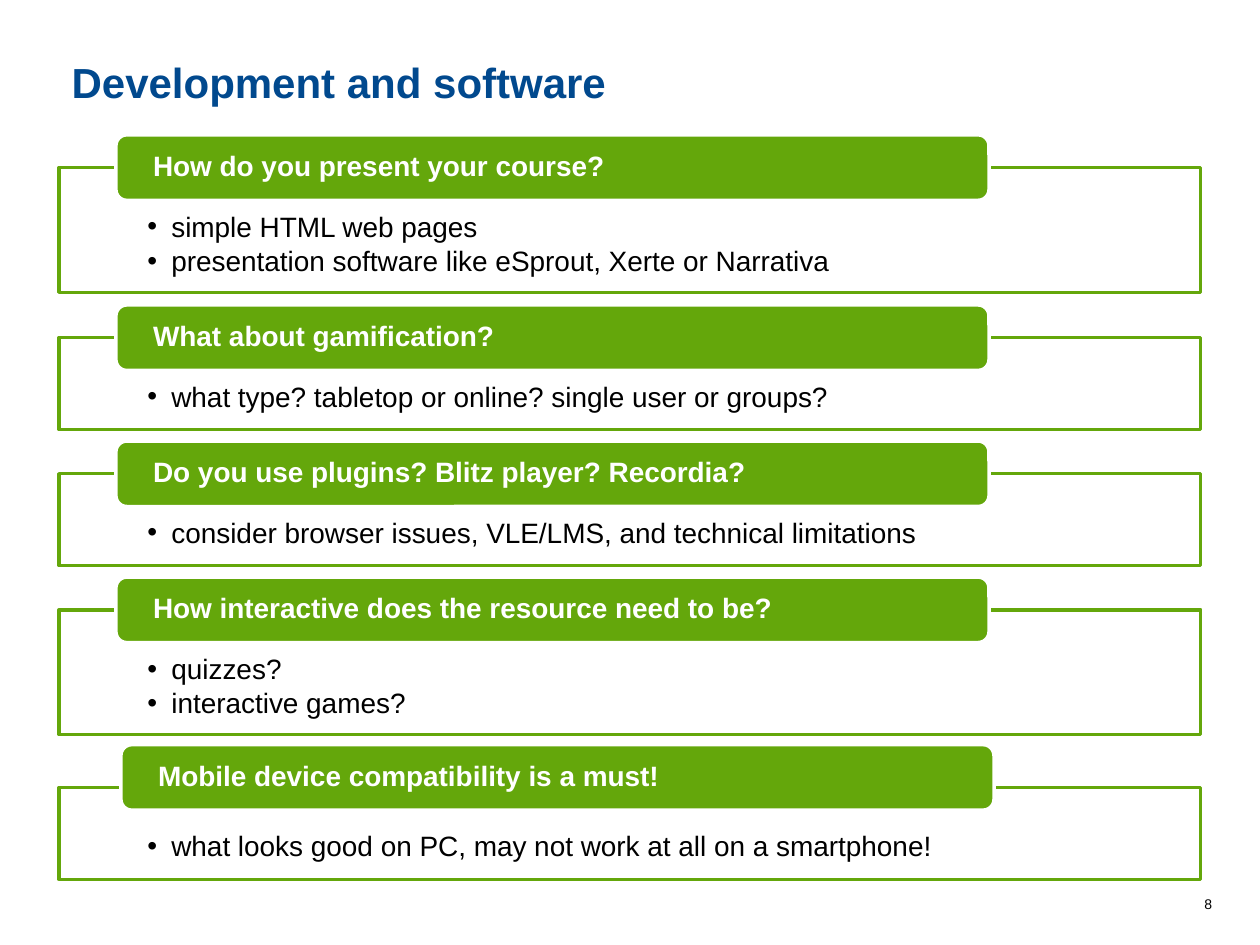
from dataclasses import dataclass

from lxml.etree import SubElement
from pptx import Presentation
from pptx.dml.color import RGBColor
from pptx.enum.shapes import MSO_SHAPE
from pptx.enum.text import MSO_ANCHOR, PP_ALIGN
from pptx.oxml.ns import qn
from pptx.util import Inches, Pt

HUES = {"blue": "01498E", "green": "64A70B", "white": "FFFFFF", "black": "000000"}


@dataclass
class Topic:
    top: float
    head: str
    items: list[str]
    left: float = 0.92
    rise: float = 0.26


TOPICS = [
    Topic(1.33, "How do you present your course?",
          ["simple HTML web pages",
           "presentation software like eSprout, Xerte or Narrativa"]),
    Topic(2.68, "What about gamification?",
          ["what type? tabletop or online? single user or groups?"]),
    Topic(3.76, "Do you use plugins? Blitz player? Recordia?",
          ["consider browser issues, VLE/LMS, and technical limitations"]),
    Topic(4.84, "How interactive does the resource need to be?",
          ["quizzes?", "interactive games?"]),
    Topic(6.25, "Mobile device compatibility is a must!",
          ["what looks good on PC, may not work at all on a smartphone!"],
          left=0.96, rise=0.34),
]


def hue(name: str) -> RGBColor:
    return RGBColor.from_string(HUES[name])


def style(para, size: float, color: str, bold: bool = False) -> None:
    for run in para.runs:
        run.font.name = "Arial"
        run.font.size = Pt(size)
        run.font.bold = bold
        run.font.color.rgb = hue(color)


def bullet(para) -> None:
    props = para._p.get_or_add_pPr()
    props.set("marL", str(Inches(0.19)))
    props.set("indent", str(Inches(-0.19)))
    SubElement(props, qn("a:buFont"), typeface="Arial")
    SubElement(props, qn("a:buChar"), char="•")


def panel(slide, kind, spot: tuple, fill: str, line: str, pads: tuple):
    shape = slide.shapes.add_shape(kind, *map(Inches, spot))
    shape.shadow.inherit = False
    shape.fill.solid()
    shape.fill.fore_color.rgb = hue(fill)
    shape.line.color.rgb = hue(line)
    shape.line.width = Pt(2)
    frame = shape.text_frame
    frame.word_wrap = True
    side, above, below = map(Inches, pads)
    frame.margin_left = frame.margin_right = side
    frame.margin_top, frame.margin_bottom = above, below
    return frame


def label(slide, text: str, spot: tuple, size: float, color: str,
          bold: bool = False, align=PP_ALIGN.LEFT) -> None:
    frame = slide.shapes.add_textbox(*map(Inches, spot)).text_frame
    frame.word_wrap = True
    frame.text = text
    para = frame.paragraphs[0]
    para.alignment = align
    style(para, size, color, bold)


def draw(slide, topic: Topic) -> None:
    count = len(topic.items)
    body = panel(slide, MSO_SHAPE.RECTANGLE,
                 (0.47, topic.top, 9.06, 0.47 + 0.26 * count),
                 "white", "green", (0.7, 0.36, 0.12))
    body.vertical_anchor = MSO_ANCHOR.TOP
    body.text = "\n".join(topic.items)
    for para in body.paragraphs:
        bullet(para)
        para.alignment = PP_ALIGN.LEFT
        para.line_spacing = 0.9
        para.space_after = Pt(2.4)
        style(para, 16, "black")

    head = panel(slide, MSO_SHAPE.ROUNDED_RECTANGLE,
                 (topic.left, topic.top - topic.rise, 6.93, 0.52),
                 "green", "white", (0.27, 0, 0))
    head.vertical_anchor = MSO_ANCHOR.MIDDLE
    head.text = topic.head
    para = head.paragraphs[0]
    para.alignment = PP_ALIGN.LEFT
    para.line_spacing = 0.9
    style(para, 16, "white", True)


def main() -> None:
    deck = Presentation()
    deck.slide_width, deck.slide_height = Inches(10), Inches(7.5)
    slide = deck.slides.add_slide(deck.slide_layouts[6])
    label(slide, "Development and software", (0.47, 0.4, 9.06, 0.5), 24, "blue", True)
    for topic in TOPICS:
        draw(slide, topic)
    label(slide, "8", (5.39, 7.06, 4.33, 0.24), 8, "black", align=PP_ALIGN.RIGHT)
    deck.save("out.pptx")


if __name__ == "__main__":
    main()
